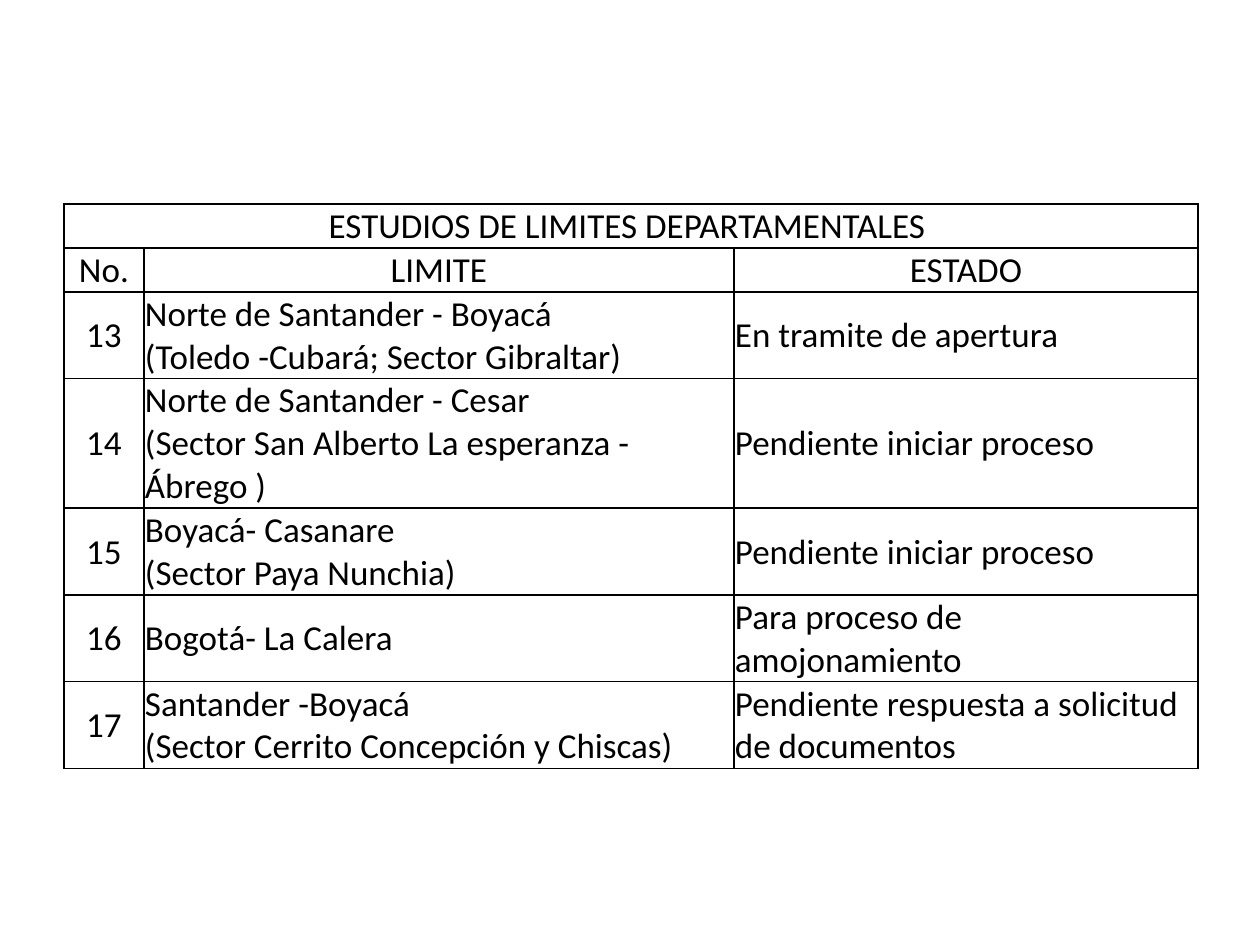
from lxml import etree
from pptx import Presentation, util as u
from pptx.dml.color import RGBColor
from pptx.enum import text
from pptx.oxml.ns import qn

PX = 914400 // 126
BLACK = RGBColor(0, 0, 0)
WHITE = RGBColor(255, 255, 255)
FONT, SIZE = "Calibri", u.Pt(20)

# Content: each cell is a list of paragraphs
TITLE = "ESTUDIOS DE LIMITES DEPARTAMENTALES "
HEADINGS = [["No."], ["LIMITE"], ["ESTADO"]]
BOUNDARIES = [
    [["13"], ["Norte de Santander - Boyacá", "(Toledo -Cubará; Sector Gibraltar)"],
     ["En tramite de apertura"]],
    [["14"], ["Norte de Santander - Cesar", "(Sector San Alberto La esperanza - Ábrego )"],
     ["Pendiente iniciar proceso"]],
    [["15"], ["Boyacá- Casanare", "(Sector Paya Nunchia)"],
     ["Pendiente iniciar proceso"]],
    [["16"], ["Bogotá- La Calera"], ["Para proceso de amojonamiento"]],
    [["17"], ["Santander -Boyacá", "(Sector Cerrito Concepción y Chiscas)"],
     ["Pendiente respuesta a solicitud de documentos"]],
]
LEFT, TOP = 64, 204
COLUMN_WIDTHS = [80, 590, 464]
ROW_HEIGHTS = [43, 43, 85, 127, 85, 85, 85]


def add_borders(cell):
    properties = cell._tc.get_or_add_tcPr()
    for side in ("a:lnL", "a:lnR", "a:lnT", "a:lnB"):
        line = etree.SubElement(properties, qn(side), w=str(u.Pt(1)))
        fill = etree.SubElement(line, qn("a:solidFill"))
        etree.SubElement(fill, qn("a:srgbClr"), val=str(BLACK))


def style_cell(cell):
    add_borders(cell)
    cell.fill.solid()
    cell.fill.fore_color.rgb = WHITE
    cell.margin_left = cell.margin_right = cell.margin_top = PX
    cell.margin_bottom = 0
    cell.vertical_anchor = text.MSO_ANCHOR.MIDDLE


def write_cell(cell, paragraphs, centred):
    for i, words in enumerate(paragraphs):
        frame = cell.text_frame
        paragraph = frame.add_paragraph() if i else frame.paragraphs[0]
        paragraph.alignment = text.PP_ALIGN.CENTER if centred else text.PP_ALIGN.LEFT
        run = paragraph.add_run()
        run.text = words
        run.font.name, run.font.size = FONT, SIZE
        run.font.bold = False
        run.font.color.rgb = BLACK


def main():
    deck = Presentation()
    deck.slide_width, deck.slide_height = u.Inches(10), u.Inches(7.5)
    slide = deck.slides.add_slide(deck.slide_layouts[6])

    # Grid
    table = slide.shapes.add_table(
        len(ROW_HEIGHTS), len(COLUMN_WIDTHS), LEFT * PX, TOP * PX,
        sum(COLUMN_WIDTHS) * PX, sum(ROW_HEIGHTS) * PX).table
    table.first_row = table.horz_banding = False
    for column, width in zip(table.columns, COLUMN_WIDTHS):
        column.width = width * PX
    for row, height in zip(table.rows, ROW_HEIGHTS):
        row.height = height * PX
    for cell in table.iter_cells():
        style_cell(cell)

    # Title across all columns
    title = table.cell(0, 0)
    title.merge(table.cell(0, len(COLUMN_WIDTHS) - 1))
    title.vertical_anchor = text.MSO_ANCHOR.BOTTOM
    write_cell(title, [TITLE], True)

    # Headings and boundary studies
    for r, entries in enumerate([HEADINGS] + BOUNDARIES, start=1):
        for c, paragraphs in enumerate(entries):
            write_cell(table.cell(r, c), paragraphs, r == 1 or c == 0)

    deck.save("out.pptx")


if __name__ == "__main__":
    main()
